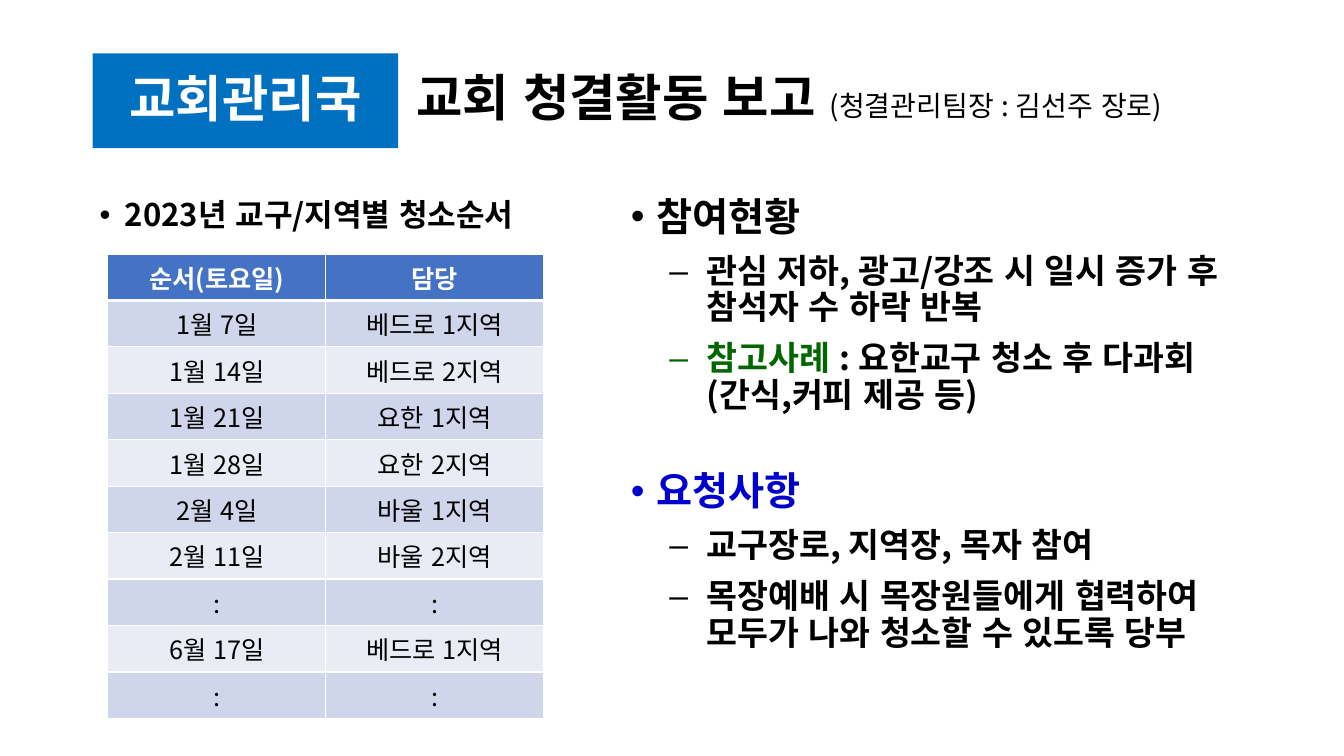
"""Build the church cleaning report slide."""
from dataclasses import dataclass
from typing import Optional

from lxml.etree import SubElement
from pptx import Presentation
from pptx.dml.color import RGBColor
from pptx.enum.lang import MSO_LANGUAGE_ID as Language
from pptx.enum.shapes import MSO_SHAPE as Shape
from pptx.enum.text import MSO_ANCHOR as Anchor, PP_ALIGN as Align
from pptx.oxml.ns import qn
from pptx.util import Inches, Pt


@dataclass(frozen=True)
class Theme:
    """Font, colours and type sizes."""
    font: str = "Noto Sans CJK KR"
    black: str = "000000"
    white: str = "FFFFFF"
    badge: str = "0070C0"
    header: str = "4472C4"
    bands: tuple = ("CFD5EA", "E9EBF5")
    green: str = "006600"
    blue: str = "0000CC"
    title: float = 36
    heading: float = 28
    detail: float = 24
    caption: float = 22.2
    note: float = 20
    cell: float = 18


THEME = Theme()


@dataclass(frozen=True)
class Span:
    """A stretch of text in one style."""
    text: str
    size: float
    color: str = THEME.black
    bold: bool = True


@dataclass(frozen=True)
class Layout:
    """Paragraph spacing, alignment and bullet."""
    align: Align = Align.LEFT
    line: float = 0.9
    before: float = 0
    after: float = 0
    bullet: Optional[str] = None
    margin: float = 0
    hanging: float = 0


@dataclass(frozen=True)
class Line:
    """A paragraph of spans with its layout."""
    spans: tuple[Span, ...]
    layout: Layout


@dataclass(frozen=True)
class Box:
    """A rectangle in inches."""
    left: float
    top: float
    width: float
    height: float

    def lengths(self) -> tuple:
        """Return the rectangle as slide lengths."""
        return tuple(map(Inches, (self.left, self.top, self.width, self.height)))


CENTERED = Layout(align=Align.CENTER)
CELL = Layout(align=Align.CENTER, line=1)
CAPTION = Layout(before=10, bullet="•", margin=0.25, hanging=0.25)
HEADING = Layout(before=5, after=6, bullet="•", margin=0.25, hanging=0.25)
NEXT_HEADING = Layout(before=35, after=6, bullet="•", margin=0.25, hanging=0.25)
DETAIL = Layout(before=4.5, after=6, bullet="–", margin=0.75, hanging=0.37)

TITLE = Line((Span("교회 청결활동 보고 ", THEME.title),
              Span("(청결관리팀장 : 김선주 장로)", THEME.note, bold=False)), Layout())
BADGE = Line((Span("교회관리국", THEME.title, THEME.white),), CENTERED)
SCHEDULE_CAPTION = Line((Span("2023년 교구/지역별 청소순서", THEME.caption),), CAPTION)
STATUS = (
    Line((Span("참여현황", THEME.heading),), HEADING),
    Line((Span("관심 저하, 광고/강조 시 일시 증가 후 참석자 수 하락 반복", THEME.detail),), DETAIL),
    Line((Span("참고사례 ", THEME.detail, THEME.green),
          Span(": 요한교구 청소 후 다과회(간식,커피 제공 등)", THEME.detail)), DETAIL),
    Line((Span("요청사항", THEME.heading, THEME.blue),), NEXT_HEADING),
    Line((Span("교구장로, 지역장, 목자 참여", THEME.detail),), DETAIL),
    Line((Span("목장예배 시 목장원들에게 협력하여 모두가 나와 청소할 수 있도록 당부",
               THEME.detail),), DETAIL),
)
SCHEDULE = (
    ("순서(토요일)", "담당"),
    ("1월 7일", "베드로 1지역"),
    ("1월 14일", "베드로 2지역"),
    ("1월 21일", "요한 1지역"),
    ("1월 28일", "요한 2지역"),
    ("2월 4일", "바울 1지역"),
    ("2월 11일", "바울 2지역"),
    (":", ":"),
    ("6월 17일", "베드로 1지역"),
    (":", ":"),
)


def write_line(paragraph, line: Line) -> None:
    """Fill one paragraph with styled spans."""
    layout = line.layout
    paragraph.alignment = layout.align
    paragraph.line_spacing = layout.line
    paragraph.space_before = Pt(layout.before)
    paragraph.space_after = Pt(layout.after)
    if layout.bullet:
        properties = paragraph._p.get_or_add_pPr()
        properties.set("marL", str(Inches(layout.margin)))
        properties.set("indent", str(-Inches(layout.hanging)))
        SubElement(properties, qn("a:buFont")).set("typeface", "Arial")
        SubElement(properties, qn("a:buChar")).set("char", layout.bullet)
    for span in line.spans:
        run = paragraph.add_run()
        run.text = span.text
        run.font.name = THEME.font
        run.font.size = Pt(span.size)
        run.font.bold = span.bold
        run.font.language_id = Language.KOREAN
        run.font.color.rgb = RGBColor.from_string(span.color)
        properties = run._r.get_or_add_rPr()
        properties.set("kern", "1200")
        SubElement(properties, qn("a:ea")).set("typeface", THEME.font)


def write_lines(text_frame, lines: tuple[Line, ...], anchor: Anchor) -> None:
    """Fill a text frame with paragraphs."""
    text_frame.word_wrap = True
    text_frame.vertical_anchor = anchor
    for index, line in enumerate(lines):
        paragraph = text_frame.add_paragraph() if index else text_frame.paragraphs[0]
        write_line(paragraph, line)


def add_text(slide, box: Box, lines: tuple[Line, ...], anchor: Anchor = Anchor.TOP) -> None:
    """Add a text box."""
    write_lines(slide.shapes.add_textbox(*box.lengths()).text_frame, lines, anchor)


def add_badge(slide, box: Box, line: Line) -> None:
    """Add the filled department label."""
    shape = slide.shapes.add_shape(Shape.RECTANGLE, *box.lengths())
    shape.shadow.inherit = False
    shape.fill.solid()
    shape.fill.fore_color.rgb = RGBColor.from_string(THEME.badge)
    shape.line.fill.background()
    write_lines(shape.text_frame, (line,), Anchor.MIDDLE)


def add_borders(cell, top: float, bottom: float) -> None:
    """Draw white borders round a table cell."""
    properties = cell._tc.get_or_add_tcPr()
    widths = {"a:lnL": 1, "a:lnR": 1, "a:lnT": top, "a:lnB": bottom}
    for position, (tag, width) in enumerate(widths.items()):
        border = SubElement(properties, qn(tag))
        border.set("w", str(Pt(width)))
        fill = SubElement(border, qn("a:solidFill"))
        SubElement(fill, qn("a:srgbClr")).set("val", THEME.white)
        properties.insert(position, border)


def add_schedule(slide, box: Box, rows: tuple) -> None:
    """Add the cleaning schedule table."""
    table = slide.shapes.add_table(len(rows), len(rows[0]), *box.lengths()).table
    for row_index, row in enumerate(rows):
        is_header = row_index == 0
        fill = THEME.header if is_header else THEME.bands[(row_index - 1) % 2]
        color = THEME.white if is_header else THEME.black
        for column_index, text in enumerate(row):
            cell = table.cell(row_index, column_index)
            cell.fill.solid()
            cell.fill.fore_color.rgb = RGBColor.from_string(fill)
            span = Span(text, THEME.cell, color, is_header)
            write_line(cell.text_frame.paragraphs[0], Line((span,), CELL))
            add_borders(cell, 3 if row_index == 1 else 1, 3 if is_header else 1)


def main() -> None:
    """Build and save the slide."""
    presentation = Presentation()
    presentation.slide_width = Inches(13.33)
    presentation.slide_height = Inches(7.5)
    slide = presentation.slides.add_slide(presentation.slide_layouts[6])
    add_text(slide, Box(4.03, 0.52, 8.39, 0.94), (TITLE,), Anchor.MIDDLE)
    add_badge(slide, Box(0.92, 0.53, 3.03, 0.94), BADGE)
    add_text(slide, Box(0.89, 1.93, 4.71, 0.73), (SCHEDULE_CAPTION,))
    add_schedule(slide, Box(1.07, 2.52, 4.32, 4.61), SCHEDULE)
    add_text(slide, Box(6.16, 1.91, 6.16, 5.06), STATUS)
    presentation.save("out.pptx")


if __name__ == "__main__":
    main()
